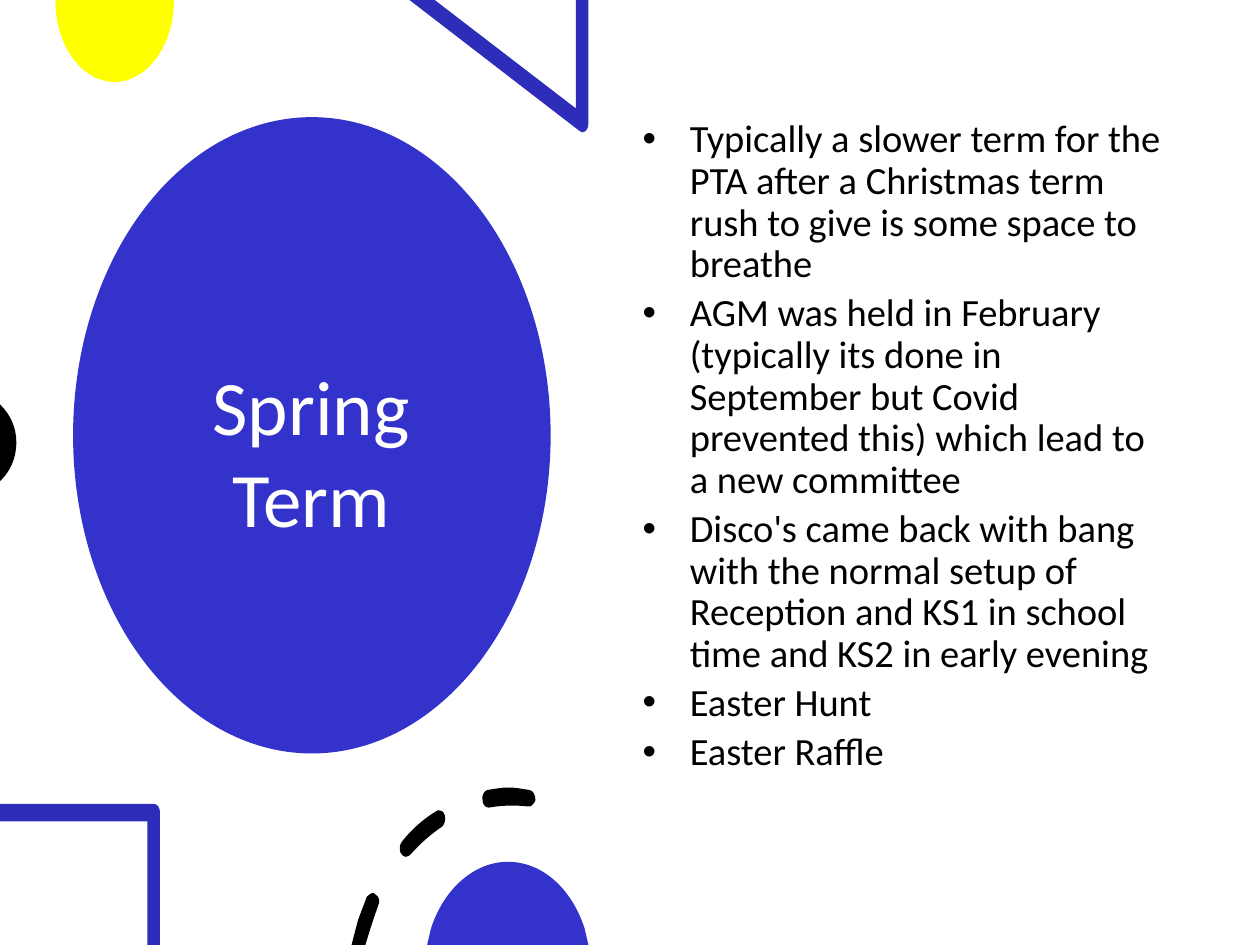
from dataclasses import dataclass

from pptx import Presentation
from pptx.dml.color import RGBColor
from pptx.enum.shapes import MSO_SHAPE
from pptx.enum.text import MSO_ANCHOR, MSO_AUTO_SIZE, PP_ALIGN
from pptx.oxml.ns import qn
from pptx.util import Inches, Pt

OVAL = MSO_SHAPE.OVAL
CENTER = PP_ALIGN.CENTER
MIDDLE, TOP = MSO_ANCHOR.MIDDLE, MSO_ANCHOR.TOP
NO_FIT = MSO_AUTO_SIZE.NONE


@dataclass(frozen=True)
class Theme:
    font: str = "Calibri"
    title_size: int = 44
    body_size: int = 22
    blue: str = "3333CC"
    frame: str = "2D2DB9"
    yellow: str = "FFFF00"
    black: str = "000000"
    white: str = "FFFFFF"


THEME = Theme()

YELLOW_DISC = [(0.94, 0), (0, 0), (0, 0.01), (0, 0.36, 0.21, 0.65, 0.47, 0.65),
               (0.73, 0.65, 0.94, 0.36, 0.94, 0.01)]
TRIANGLE = [(1.42, 0), (1.32, 0), (1.32, 0.86), (0.2, 0), (0, 0), (1.35, 1.04),
            (1.36, 1.05, 1.36, 1.05, 1.37, 1.05), (1.4, 1.05, 1.42, 1.02, 1.42, 0.98)]
BLACK_DISC = [(0, 0), (0, 0.61), (0.01, 0.6), (0.08, 0.53, 0.13, 0.43, 0.13, 0.3),
              (0.13, 0.18, 0.08, 0.08, 0.01, 0.01)]
SQUARE = [(1.22, 0), (0, 0), (0, 0.14), (1.17, 0.14), (1.17, 1.12), (1.27, 1.12),
          (1.27, 0.07), (1.27, 0.03, 1.25, 0, 1.22, 0)]
LOW_DASH = [(0.18, 0.84), (0.16, 0.83, 0.14, 0.85, 0.12, 0.87),
            (0.1, 0.93, 0.07, 1, 0.05, 1.06), (0, 1.25), (0.11, 1.25), (0.15, 1.12),
            (0.17, 1.06, 0.19, 1, 0.21, 0.94), (0.23, 0.91, 0.22, 0.86, 0.19, 0.85),
            (0.19, 0.84, 0.18, 0.84, 0.18, 0.84)]
MID_DASH = [(0.69, 0.18), (0.68, 0.18, 0.68, 0.18, 0.67, 0.19),
            (0.57, 0.25, 0.48, 0.33, 0.4, 0.43), (0.38, 0.45, 0.38, 0.5, 0.39, 0.52),
            (0.4, 0.54, 0.42, 0.55, 0.43, 0.55), (0.45, 0.55, 0.46, 0.54, 0.47, 0.53),
            (0.54, 0.45, 0.63, 0.37, 0.72, 0.31), (0.74, 0.29, 0.75, 0.25, 0.74, 0.22),
            (0.73, 0.19, 0.71, 0.18, 0.69, 0.18)]
TOP_DASH = [(1.25, 0), (1.19, 0, 1.14, 0.01, 1.08, 0.02), (1.06, 0.02, 1.03, 0.06, 1.04, 0.1),
            (1.04, 0.13, 1.06, 0.16, 1.09, 0.16), (1.2, 0.14, 1.3, 0.14, 1.4, 0.15),
            (1.42, 0.16, 1.45, 0.13, 1.46, 0.1), (1.46, 0.06, 1.44, 0.02, 1.41, 0.02),
            (1.35, 0.01, 1.3, 0, 1.25, 0)]
BLUE_DISC = [(0.64, 0), (0.37, 0, 0.13, 0.22, 0.03, 0.53), (0, 0.66), (1.28, 0.66),
             (1.25, 0.53), (1.15, 0.22, 0.92, 0, 0.64, 0)]

DECORATIONS = [
    (0.44, 0, [YELLOW_DISC], THEME.yellow),
    (3.25, 0, [TRIANGLE], THEME.frame),
    (0, 3.21, [BLACK_DISC], THEME.black),
    (0, 6.38, [SQUARE], THEME.frame),
    (2.79, 6.25, [LOW_DASH, MID_DASH, TOP_DASH], THEME.black),
    (3.39, 6.84, [BLUE_DISC], THEME.blue),
]

BULLETS = [
    "Typically a slower term for the PTA after a Christmas term rush to give is some space to breathe",
    "AGM was held in February (typically its done in September but Covid prevented this) "
    "which lead to a new committee",
    "Disco's came back with bang with the normal setup of Reception and KS1 in school time "
    "and KS2 in early evening",
    "Easter Hunt",
    "Easter Raffle",
]


def paint(sp, color):
    sp.shadow.inherit = False
    sp.fill.solid()
    sp.fill.fore_color.rgb = RGBColor.from_string(color)
    sp.line.fill.background()


def place(sp, left, top, width, height):
    sp.left, sp.top = Inches(left), Inches(top)
    sp.width, sp.height = Inches(width), Inches(height)


def add_run(p, text, size, color):
    r = p.add_run()
    r.text = text
    r.font.name = THEME.font
    r.font.size = Pt(size)
    r.font.color.rgb = RGBColor.from_string(color)


def bend_curves(sp, outlines):
    segments = iter(sp._element.xpath(".//a:lnTo"))
    for outline in outlines:
        for step in outline[1:]:
            segment = next(segments)
            if len(step) == 6:
                segment.tag = qn("a:cubicBezTo")
                for _ in range(2):
                    extra = next(segments)
                    segment.append(extra[0])
                    extra.getparent().remove(extra)


def add_decoration(s, left, top, outlines, color):
    builder = None
    for outline in outlines:
        points = [(Inches(left + step[i]), Inches(top + step[i + 1]))
                  for step in outline for i in range(0, len(step), 2)]
        if builder is None:
            builder = s.shapes.build_freeform(*points[0])
        else:
            builder.move_to(*points[0])
        builder.add_line_segments(points[1:], close=True)
    sp = builder.convert_to_shape()
    bend_curves(sp, outlines)
    paint(sp, color)


def add_title(s, left, top, width, height):
    oval = s.shapes.add_shape(OVAL, Inches(left), Inches(top), Inches(width), Inches(height))
    paint(oval, THEME.blue)
    title = s.shapes.title
    title._element.addprevious(oval._element)
    place(title, left + 0.56, top + 0.42, width - 1.13, height - 0.6)
    tf = title.text_frame
    tf.word_wrap = True
    tf.auto_size = NO_FIT
    tf.vertical_anchor = MIDDLE
    p = tf.paragraphs[0]
    p.alignment = CENTER
    add_run(p, "Spring Term", THEME.title_size, THEME.white)


def add_bullets(s, left, top, width, height):
    body = s.placeholders[1]
    place(body, left, top, width, height)
    tf = body.text_frame
    tf.word_wrap = True
    tf.auto_size = NO_FIT
    tf.vertical_anchor = TOP
    for i, text in enumerate(BULLETS):
        p = tf.add_paragraph() if i else tf.paragraphs[0]
        p.line_spacing = 0.9
        add_run(p, text, THEME.body_size, THEME.black)


def main():
    prs = Presentation()
    prs.slide_width, prs.slide_height = Inches(10), Inches(7.5)
    s = prs.slides.add_slide(prs.slide_layouts[1])
    add_title(s, 0.58, 0.93, 3.79, 5.05)
    add_bullets(s, 5, 0.9, 4.33, 5.35)
    for decoration in DECORATIONS:
        add_decoration(s, *decoration)
    prs.save("out.pptx")


if __name__ == "__main__":
    main()
